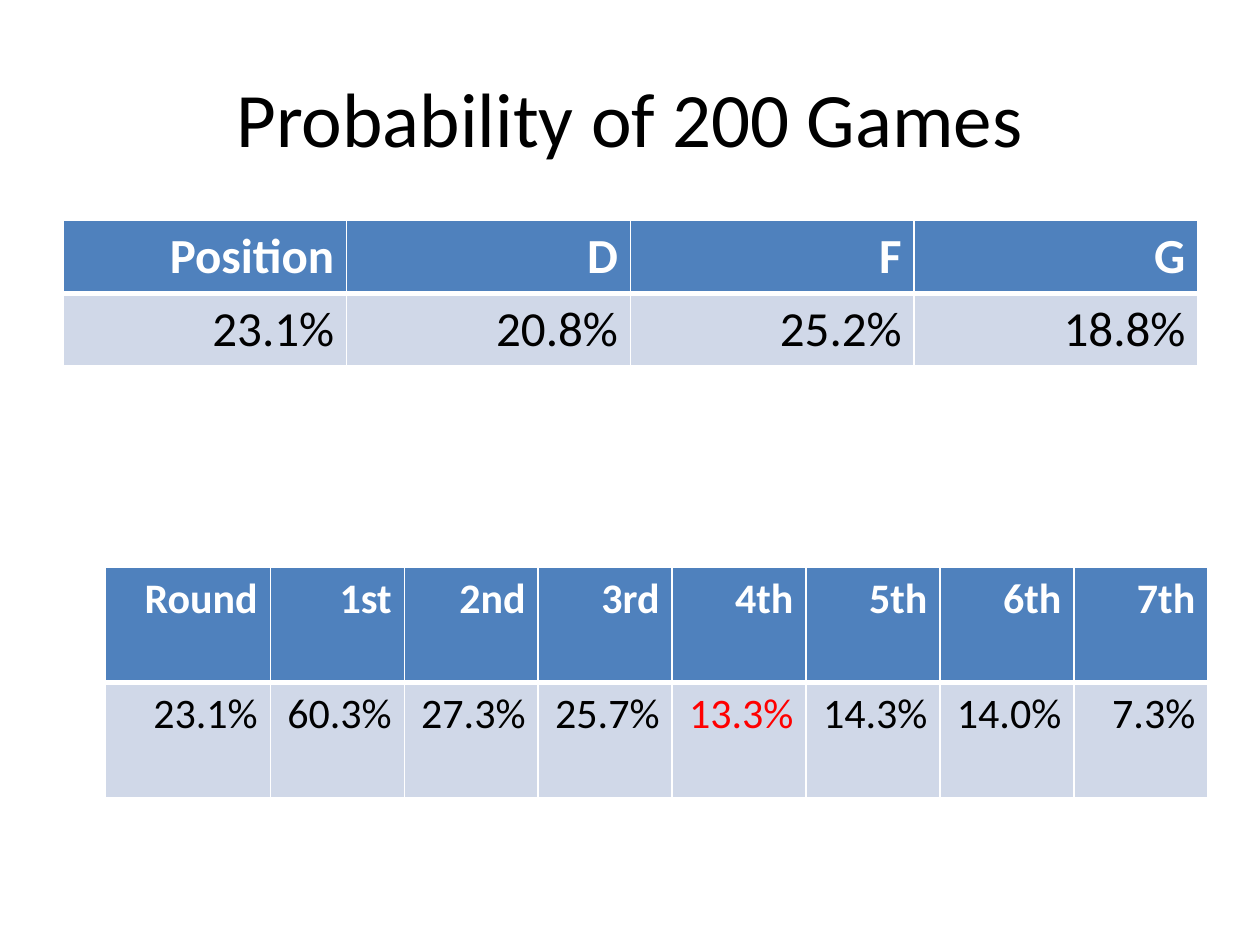
from lxml import etree
from pptx import Presentation
from pptx.dml.color import RGBColor
from pptx.enum.text import MSO_ANCHOR, PP_ALIGN
from pptx.oxml.ns import qn
from pptx.util import Cm, Pt

CENTER, RIGHT = PP_ALIGN.CENTER, PP_ALIGN.RIGHT
MIDDLE = MSO_ANCHOR.MIDDLE
TITLE_ONLY = 5

COLORS = {
    "text": "000000",
    "header_text": "FFFFFF",
    "header": "4F81BD",
    "body": "D0D8E8",
    "border": "FFFFFF",
    "highlight": "FF0000",
}


def rgb(name):
    return RGBColor.from_string(COLORS[name])


class SlideBuilder:
    """Holds the slide being built and its text style."""

    font_name = "Calibri"

    def __init__(self, slide):
        self.slide = slide

    def format_text(self, paragraph, size, color, align, bold=False):
        paragraph.alignment = align
        for run in paragraph.runs:
            run.font.name = self.font_name
            run.font.size = Pt(size)
            run.font.bold = bold
            run.font.color.rgb = rgb(color)

    def title(self, text, left, top, width, height):
        title = self.slide.shapes.title
        title.left, title.top = Cm(left), Cm(top)
        title.width, title.height = Cm(width), Cm(height)
        frame = title.text_frame
        frame.text = text
        frame.vertical_anchor = MIDDLE
        self.format_text(frame.paragraphs[0], 44, "text", CENTER)

    def borders(self, cell, top, bottom):
        """Draw the cell's borders; top and bottom are widths in points."""
        properties = cell._tc.get_or_add_tcPr()
        for side, width in (("L", 1), ("R", 1), ("T", top), ("B", bottom)):
            line = etree.SubElement(properties, qn(f"a:ln{side}"), w=str(Pt(width)))
            fill = etree.SubElement(line, qn("a:solidFill"))
            etree.SubElement(fill, qn("a:srgbClr"), val=COLORS["border"])

    def table(self, shares, left, top, column_widths, row_height, size, highlight=None):
        """Put the labels of shares in a header row and their values below."""
        frame = self.slide.shapes.add_table(
            2, len(shares), Cm(left), Cm(top),
            Cm(sum(column_widths)), Cm(2 * row_height))
        table = frame.table
        for row in table.rows:
            row.height = Cm(row_height)
        for column, (label, share) in enumerate(shares.items()):
            table.columns[column].width = Cm(column_widths[column])
            share_color = "highlight" if label == highlight else "text"
            self.cell(table.cell(0, column), label, size, "header_text", "header",
                      bold=True, bottom=3)
            self.cell(table.cell(1, column), share, size, share_color, "body", top=3)

    def cell(self, cell, text, size, color, fill, bold=False, top=1, bottom=1):
        self.borders(cell, top, bottom)
        cell.fill.solid()
        cell.fill.fore_color.rgb = rgb(fill)
        cell.text_frame.text = text
        self.format_text(cell.text_frame.paragraphs[0], size, color, RIGHT, bold)


def main():
    presentation = Presentation()
    presentation.slide_width, presentation.slide_height = Cm(25.4), Cm(19.05)
    layout = presentation.slide_layouts[TITLE_ONLY]
    builder = SlideBuilder(presentation.slides.add_slide(layout))

    builder.title("Probability of 200 Games", 1.27, 0.76, 22.86, 3.18)

    by_position = {"Position": "23.1%", "D": "20.8%", "F": "25.2%", "G": "18.8%"}
    builder.table(by_position, 1.27, 4.45, [5.72] * 4, 1.44, size=28)

    by_round = {
        "Round": "23.1%", "1st": "60.3%", "2nd": "27.3%", "3rd": "25.7%",
        "4th": "13.3%", "5th": "14.3%", "6th": "14.0%", "7th": "7.3%",
    }
    builder.table(by_round, 2.12, 11.43, [3.33] + [2.7] * 7, 2.33, size=24,
                  highlight="4th")

    presentation.save("out.pptx")


if __name__ == "__main__":
    main()
